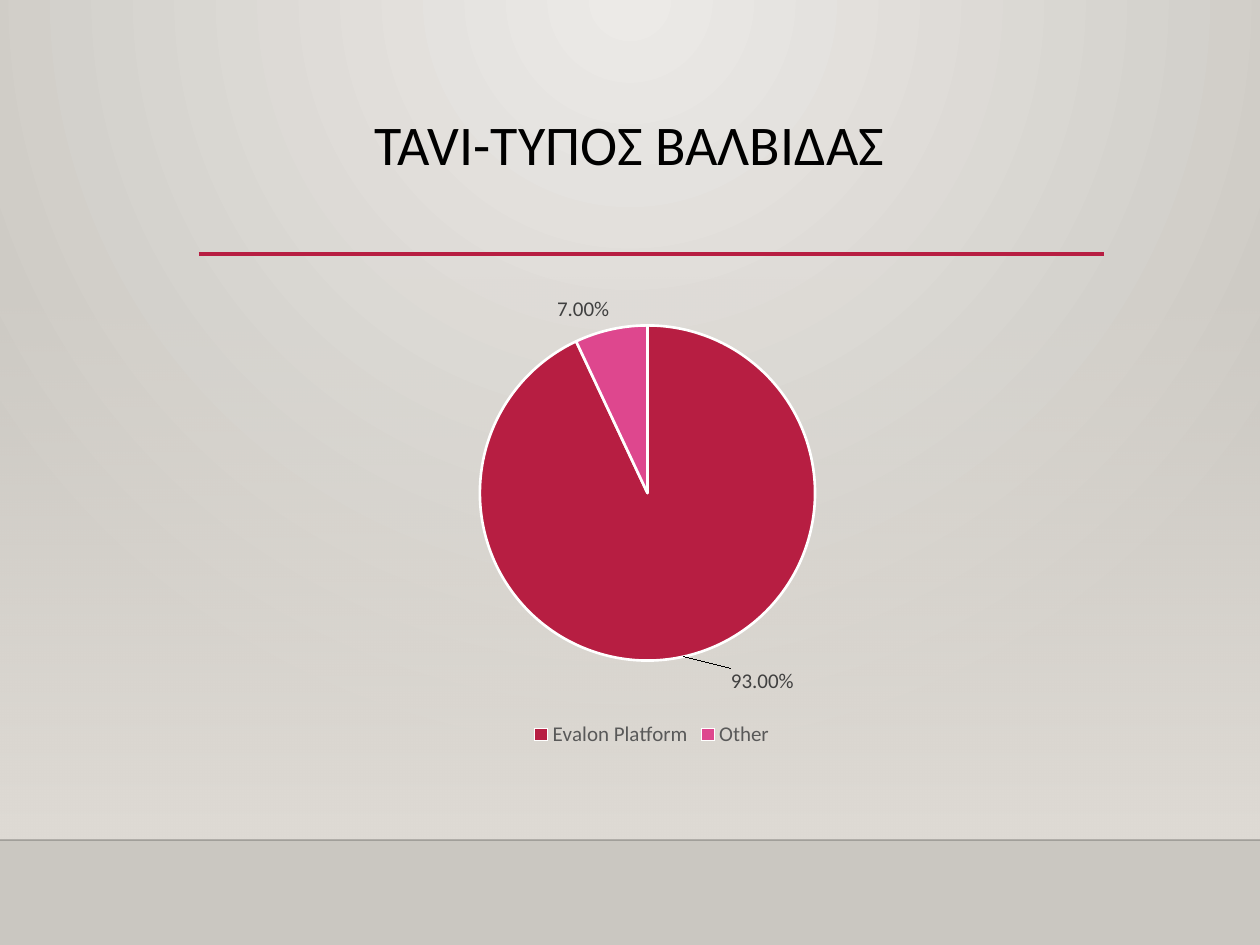
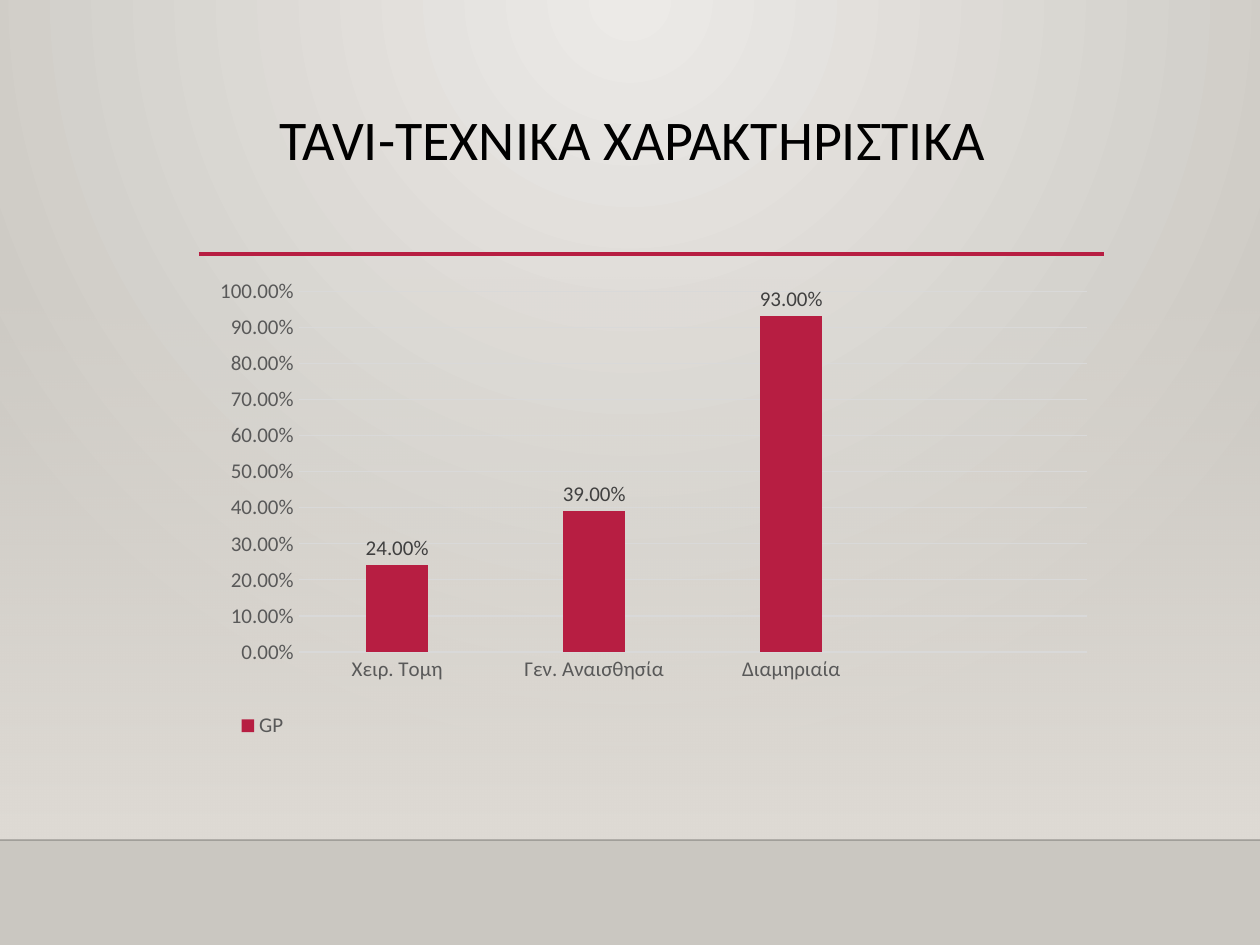
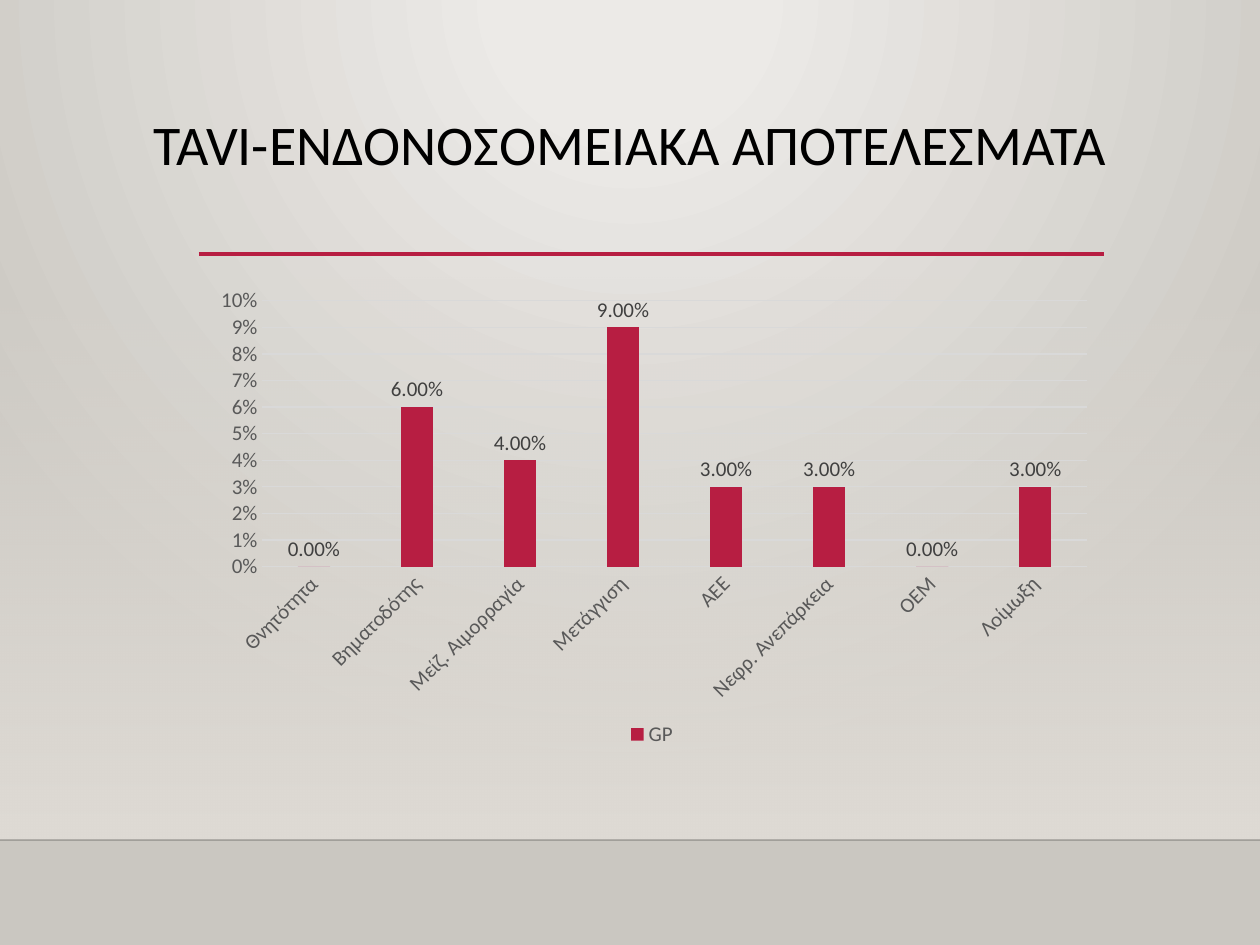
from dataclasses import dataclass

from lxml import etree
from pptx import Presentation
from pptx.chart.data import CategoryChartData
from pptx.dml.color import RGBColor
from pptx.enum.chart import (XL_CHART_TYPE, XL_LABEL_POSITION,
                             XL_LEGEND_POSITION, XL_TICK_MARK)
from pptx.enum.shapes import MSO_CONNECTOR, MSO_SHAPE
from pptx.enum.text import MSO_ANCHOR, PP_ALIGN
from pptx.oxml.ns import qn
from pptx.util import Pt

PIE, COLUMNS = XL_CHART_TYPE.PIE, XL_CHART_TYPE.COLUMN_CLUSTERED
OUTSIDE, BOTTOM = XL_LABEL_POSITION.OUTSIDE_END, XL_LEGEND_POSITION.BOTTOM
NO_TICK = XL_TICK_MARK.NONE
STRAIGHT, RECT = MSO_CONNECTOR.STRAIGHT, MSO_SHAPE.RECTANGLE
TOP, CENTER = MSO_ANCHOR.TOP, PP_ALIGN.CENTER

SLIDE_W, SLIDE_H = 1260, 945
CHART_BOX = (199, 277, 906, 475)
PERCENT = "0.00%"


@dataclass(frozen=True)
class Theme:
    font: str = "Calibri"
    title_size: int = 32
    chart_size: int = 12
    black: str = "000000"
    axis_text: str = "595959"
    label_text: str = "404040"
    grid: str = "D9D9D9"
    white: str = "FFFFFF"
    accent: str = "B71E42"
    pink: str = "DE478E"
    bg_light: str = "ECEAE7"
    bg_dark: str = "CAC7C1"
    floor: str = "DFDBD5"


T = Theme()


def px(n):
    return round(n * 914400 / 126)


def rgb(color):
    return RGBColor.from_string(color)


def style_font(font, color, size=T.chart_size):
    font.name, font.size = T.font, Pt(size)
    font.color.rgb = rgb(color)


def sub(parent, tag, **attrs):
    return etree.SubElement(parent, qn(tag), {k: str(v) for k, v in attrs.items()})


def set_gradient(element, stops, angle=None):
    """Give the gradient inside element (percent, colour, opacity) stops.

    Without an angle it spreads in circles from the middle of the top edge.
    """
    grad = next(element.iter(qn("a:gradFill")))
    for child in list(grad):
        grad.remove(child)
    stop_list = sub(grad, "a:gsLst")
    for pos, color, opacity in stops:
        clr = sub(sub(stop_list, "a:gs", pos=pos * 1000), "a:srgbClr", val=color)
        if opacity < 100:
            sub(clr, "a:alpha", val=opacity * 1000)
    if angle is None:
        circle = sub(grad, "a:path", path="circle")
        sub(circle, "a:fillToRect", l=43000, t=0, r=43000, b=100000)
    else:
        sub(grad, "a:lin", ang=angle * 60000, scaled=0)


def add_rule(s, x1, x2, y, color, width, opacity=100):
    line = s.shapes.add_connector(STRAIGHT, px(x1), px(y), px(x2), px(y))
    line.line.color.rgb, line.line.width = rgb(color), Pt(width)
    sub(line._element.spPr, "a:effectLst")
    if opacity < 100:
        clr = next(line._element.spPr.iter(qn("a:srgbClr")))
        sub(clr, "a:alpha", val=opacity * 1000)


def add_text(s, text, x, y, w, h, *, size, color, align=CENTER, spacing=0.9):
    tf = s.shapes.add_textbox(px(x), px(y), px(w), px(h)).text_frame
    tf.word_wrap, tf.vertical_anchor = True, TOP
    p = tf.paragraphs[0]
    p.alignment, p.line_spacing = align, spacing
    r = p.add_run()
    r.text = text
    style_font(r.font, color, size)


def add_base_slide(prs, title, title_box=(0, 111, 1260, 145), glow=0):
    """Add a slide with backdrop, floor, rules and title; glow is the light core in percent."""
    s = prs.slides.add_slide(prs.slide_layouts[6])
    s.background.fill.gradient()
    set_gradient(s._element, [(glow, T.bg_light, 100), (100, T.bg_dark, 100)])
    floor = s.shapes.add_shape(RECT, 0, px(277), px(SLIDE_W), px(563))
    floor.shadow.inherit = False
    floor.line.fill.background()
    floor.fill.gradient()
    set_gradient(floor._element.spPr, [(0, T.floor, 0), (100, T.floor, 100)], angle=90)
    add_rule(s, 0, SLIDE_W, 840, T.black, 1, opacity=20)
    add_rule(s, 199, 1104, 254, T.accent, 2.5)
    add_text(s, title, *title_box, size=T.title_size, color=T.black)
    return s


def set_layout(element, index, x, y, w=None, h=None, inner=False):
    """Place a chart part by fractions; without a size, x and y are offsets."""
    for old in element.findall(qn("c:layout")):
        element.remove(old)
    layout = etree.Element(qn("c:layout"))
    element.insert(index, layout)
    manual = sub(layout, "c:manualLayout")
    if inner:
        sub(manual, "c:layoutTarget", val="inner")
    if w is not None:
        sub(manual, "c:xMode", val="edge")
        sub(manual, "c:yMode", val="edge")
    for tag, value in (("x", x), ("y", y), ("w", w), ("h", h)):
        if value is not None:
            sub(manual, f"c:{tag}", val=value)


def add_chart(s, kind, name, values, plot_area):
    """Add a chart with bottom legend and value labels; values maps category to value."""
    data = CategoryChartData(number_format=PERCENT)
    data.categories = list(values)
    data.add_series(name, list(values.values()))
    chart = s.shapes.add_chart(kind, *map(px, CHART_BOX), data).chart
    chart.has_title = False
    style_font(chart.font, T.black, 10)
    chart.has_legend = True
    chart.legend.position, chart.legend.include_in_layout = BOTTOM, False
    style_font(chart.legend.font, T.axis_text)
    set_layout(chart._chartSpace.chart.plotArea, 0, *plot_area, inner=True)
    labels = chart.plots[0].series[0].data_labels
    labels.show_value, labels.position = True, OUTSIDE
    labels.number_format, labels.number_format_is_linked = PERCENT, False
    style_font(labels.font, T.label_text)
    return chart


def add_pie(s, name, values, colors, plot_area):
    chart = add_chart(s, PIE, name, values, plot_area)
    chart.plots[0].vary_by_categories = True
    points = chart.plots[0].series[0].points
    for i, color in enumerate(colors):
        fmt = points[i].format
        fmt.fill.solid()
        fmt.fill.fore_color.rgb = rgb(color)
        fmt.line.color.rgb, fmt.line.width = rgb(T.white), Pt(1.5)
    main_label = points[0].data_label
    main_label.position = OUTSIDE
    style_font(main_label.font, T.label_text)
    set_layout(next(chart._chartSpace.iter(qn("c:dLbl"))), 1, 0.05, 0.01)


def add_columns(s, values, plot_area, *, top, step, axis_format, turn=0):
    chart = add_chart(s, COLUMNS, "GP", values, plot_area)
    plot = chart.plots[0]
    plot.vary_by_categories, plot.gap_width, plot.overlap = False, 219, -27
    fill = plot.series[0].format.fill
    fill.solid()
    fill.fore_color.rgb = rgb(T.accent)
    cat, val = chart.category_axis, chart.value_axis
    for axis in (cat, val):
        axis.major_tick_mark = axis.minor_tick_mark = NO_TICK
        style_font(axis.tick_labels.font, T.axis_text)
    val.minimum_scale, val.maximum_scale, val.major_unit = 0, top, step
    val.tick_labels.number_format = axis_format
    val.tick_labels.number_format_is_linked = False
    val.format.line.fill.background()
    val.has_major_gridlines = True
    for line in (cat.format.line, val.major_gridlines.format.line):
        line.color.rgb, line.width = rgb(T.grid), Pt(0.75)
    if turn:
        body = next(cat._element.iter(qn("a:bodyPr")))
        body.set("rot", str(turn * 60000))
        body.set("vert", "horz")
    return chart


def main():
    prs = Presentation()
    prs.slide_width, prs.slide_height = px(SLIDE_W), px(SLIDE_H)

    s = add_base_slide(prs, "TAVI-ΤΥΠΟΣ ΒΑΛΒΙΔΑΣ")
    add_pie(s, "Series 1", {"Evalon Platform": 0.93, "Other": 0.07},
            (T.accent, T.pink), (0.31, 0.1, 0.37, 0.71))

    s = add_base_slide(prs, "TAVI-ΤΕΧΝΙΚΑ ΧΑΡΑΚΤΗΡΙΣΤΙΚΑ", (5, 106, 1255, 139))
    technique = {"Χειρ. Τομη": 0.24, "Γεν. Αναισθησία": 0.39,
                 "Διαμηριαία": 0.93, "": None}
    chart = add_columns(s, technique, (0.11, 0.03, 0.87, 0.76),
                        top=1, step=0.1, axis_format=PERCENT)
    set_layout(chart.legend._element, 1, 0.03, 0.91, 0.08, 0.07)

    s = add_base_slide(prs, "TAVI-ΕΝΔΟΝΟΣΟΜΕΙΑΚΑ ΑΠΟΤΕΛΕΣΜΑΤΑ", glow=15)
    outcomes = {"Θνητότητα": 0, "Βηματοδότης": 0.06, "Μείζ. Αιμορραγία": 0.04,
                "Μετάγγιση": 0.09, "AEE": 0.03, "Νεφρ. Ανεπάρκεια": 0.03,
                "ΟΕΜ": 0, "Λοίμωξη": 0.03}
    add_columns(s, outcomes, (0.07, 0.05, 0.91, 0.56),
                top=0.1, step=0.01, axis_format="0%", turn=-45)

    prs.save("out.pptx")


if __name__ == "__main__":
    main()
